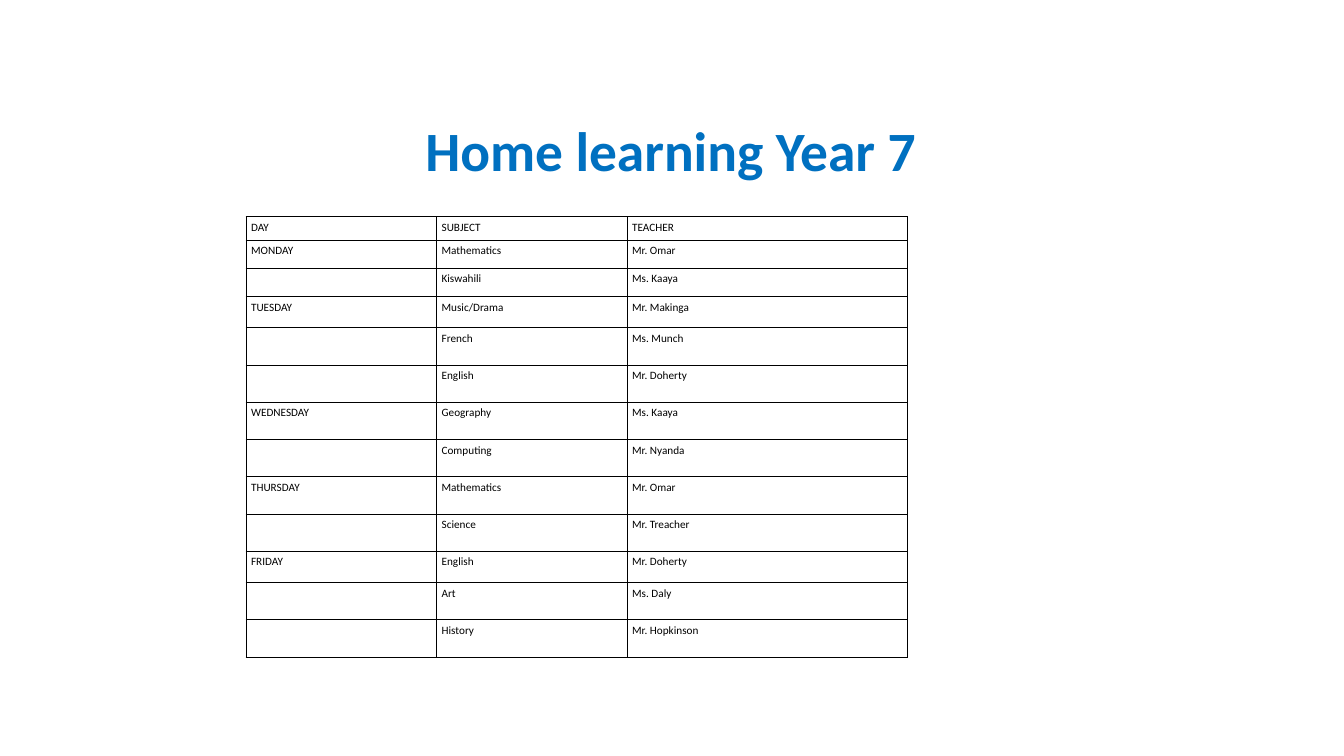
from typing import NamedTuple

from lxml.etree import SubElement
from pptx import Presentation
from pptx.dml.color import RGBColor
from pptx.enum.text import MSO_ANCHOR
from pptx.oxml.ns import qn
from pptx.util import Inches, Pt

COLOURS = {"title": "0070C0", "text": "000000", "border": "000000"}
FONT = "Calibri"
CELL_SIZE = 8
BORDER_WIDTH = 0.5
COLUMN_WIDTHS = (1.89, 1.89, 2.78)


class Lesson(NamedTuple):
    day: str
    subject: str
    teacher: str
    height: float = 0.37


TIMETABLE = (
    Lesson("DAY", "SUBJECT", "TEACHER", 0.23),
    Lesson("MONDAY", "Mathematics", "Mr. Omar", 0.28),
    Lesson("", "Kiswahili", "Ms. Kaaya", 0.28),
    Lesson("TUESDAY", "Music/Drama", "Mr. Makinga", 0.31),
    Lesson("", "French", "Ms. Munch"),
    Lesson("", "English", "Mr. Doherty"),
    Lesson("WEDNESDAY", "Geography", "Ms. Kaaya"),
    Lesson("", "Computing", "Mr. Nyanda"),
    Lesson("THURSDAY", "Mathematics", "Mr. Omar"),
    Lesson("", "Science", "Mr. Treacher"),
    Lesson("FRIDAY", "English", "Mr. Doherty", 0.31),
    Lesson("", "Art", "Ms. Daly"),
    Lesson("", "History", "Mr. Hopkinson"),
)


def write(para, text: str, *, size: float, colour: str, bold: bool = False) -> None:
    """Add formatted text; an empty paragraph still gets its line size."""
    if not text:
        SubElement(para._p, qn("a:endParaRPr"), sz=str(round(size * 100)))
        return
    span = para.add_run()
    span.text = text
    span.font.name = FONT
    span.font.size = Pt(size)
    span.font.bold = bold
    span.font.color.rgb = RGBColor.from_string(COLOURS[colour])


def add_borders(cell) -> None:
    properties = cell._tc.get_or_add_tcPr()
    for side in ("lnL", "lnR", "lnT", "lnB"):
        line = SubElement(properties, qn(f"a:{side}"), w=str(Pt(BORDER_WIDTH)))
        fill = SubElement(line, qn("a:solidFill"))
        SubElement(fill, qn("a:srgbClr"), val=COLOURS["border"])


def add_title(page, text: str) -> None:
    box = page.shapes.add_textbox(Inches(4.12), Inches(1.27), Inches(5.08), Inches(0.5))
    frame = box.text_frame
    frame.word_wrap = True
    frame.vertical_anchor = MSO_ANCHOR.MIDDLE
    para = frame.paragraphs[0]
    para.line_spacing = 0.9
    write(para, text, size=39.6, colour="title", bold=True)


def fill_cell(cell, text: str) -> None:
    cell.margin_left = cell.margin_right = Inches(0.05)
    cell.margin_top = cell.margin_bottom = Inches(0.04)
    add_borders(cell)
    cell.fill.background()
    write(cell.text_frame.paragraphs[0], text, size=CELL_SIZE, colour="text")


def add_timetable(page, lessons: tuple[Lesson, ...]) -> None:
    frame = page.shapes.add_table(
        len(lessons), len(COLUMN_WIDTHS), Inches(2.44), Inches(2.15),
        Inches(sum(COLUMN_WIDTHS)), Inches(sum(lesson.height for lesson in lessons)))
    table = frame.table
    table.first_row = False
    table.horz_banding = False
    for column, width in zip(table.columns, COLUMN_WIDTHS):
        column.width = Inches(width)
    for row, lesson in zip(table.rows, lessons):
        row.height = Inches(lesson.height)
        for cell, text in zip(row.cells, (lesson.day, lesson.subject, lesson.teacher)):
            fill_cell(cell, text)


def main() -> None:
    deck = Presentation()
    deck.slide_width = Inches(13.33)
    deck.slide_height = Inches(7.5)
    page = deck.slides.add_slide(deck.slide_layouts[6])
    add_title(page, "Home learning Year 7")
    add_timetable(page, TIMETABLE)
    deck.save("out.pptx")


if __name__ == "__main__":
    main()
